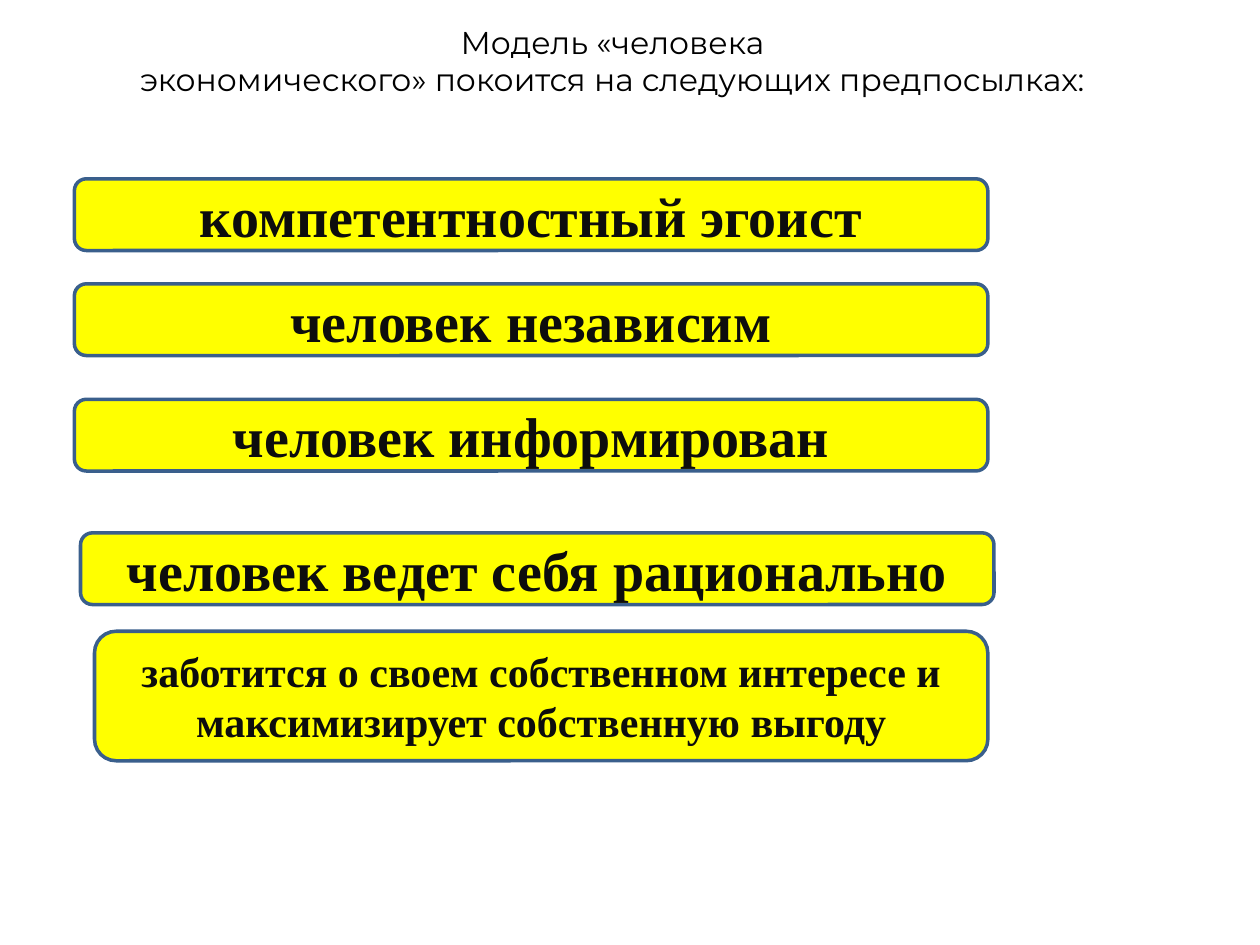
from pptx import Presentation
from pptx.dml.color import RGBColor
from pptx.enum.shapes import MSO_SHAPE as SHAPE
from pptx.enum.text import MSO_ANCHOR as ANCHOR, PP_ALIGN as ALIGN
from pptx.util import Pt

COLORS = {"title": "000000", "text": "0D0D0D", "fill": "FFFF00", "line": "3A5F8C"}

TITLE = ["Модель «человека", "экономического» покоится на следующих предпосылках:"]

# Text, left, top, width, height, font size
PREMISES = [
    ("компетентностный эгоист", 42.5, 102.2, 522, 41, 32),
    ("человек независим", 42.5, 162.2, 522, 41, 32),
    ("человек информирован", 42.5, 228.2, 522, 41, 32),
    ("человек ведет себя рационально", 46, 304.5, 522, 41, 32),
    ("заботится о своем собственном интересе и максимизирует собственную выгоду",
     54, 360.7, 510.5, 74, 24),
]


def color(name):
    return RGBColor.from_string(COLORS[name])


def write(tf, lines, *, font, size, ink, bold=False, anchor=ANCHOR.TOP):
    tf.word_wrap = True
    tf.vertical_anchor = anchor
    for i, line in enumerate(lines):
        p = tf.paragraphs[0] if i == 0 else tf.add_paragraph()
        p.alignment = ALIGN.CENTER
        r = p.add_run()
        r.text = line
        r.font.name, r.font.size, r.font.bold = font, Pt(size), bold
        r.font.color.rgb = color(ink)


def add_title(s, lines):
    sp = s.shapes.add_textbox(Pt(0), Pt(9.4), Pt(700), Pt(51))
    write(sp.text_frame, lines, font="Montserrat", size=18, ink="title")


def add_premise(s, text, left, top, width, height, size):
    sp = s.shapes.add_shape(SHAPE.ROUNDED_RECTANGLE,
                            Pt(left), Pt(top), Pt(width), Pt(height))
    sp.shadow.inherit = False
    sp.fill.solid()
    sp.fill.fore_color.rgb = color("fill")
    sp.line.color.rgb = color("line")
    sp.line.width = Pt(2)
    write(sp.text_frame, [text], font="Times New Roman", size=size,
          ink="text", bold=True, anchor=ANCHOR.MIDDLE)


def main():
    prs = Presentation()
    prs.slide_width, prs.slide_height = Pt(720), Pt(540)
    s = prs.slides.add_slide(prs.slide_layouts[6])

    # Heading
    add_title(s, TITLE)

    # Premises of the model
    for premise in PREMISES:
        add_premise(s, *premise)

    prs.save("out.pptx")


if __name__ == "__main__":
    main()
